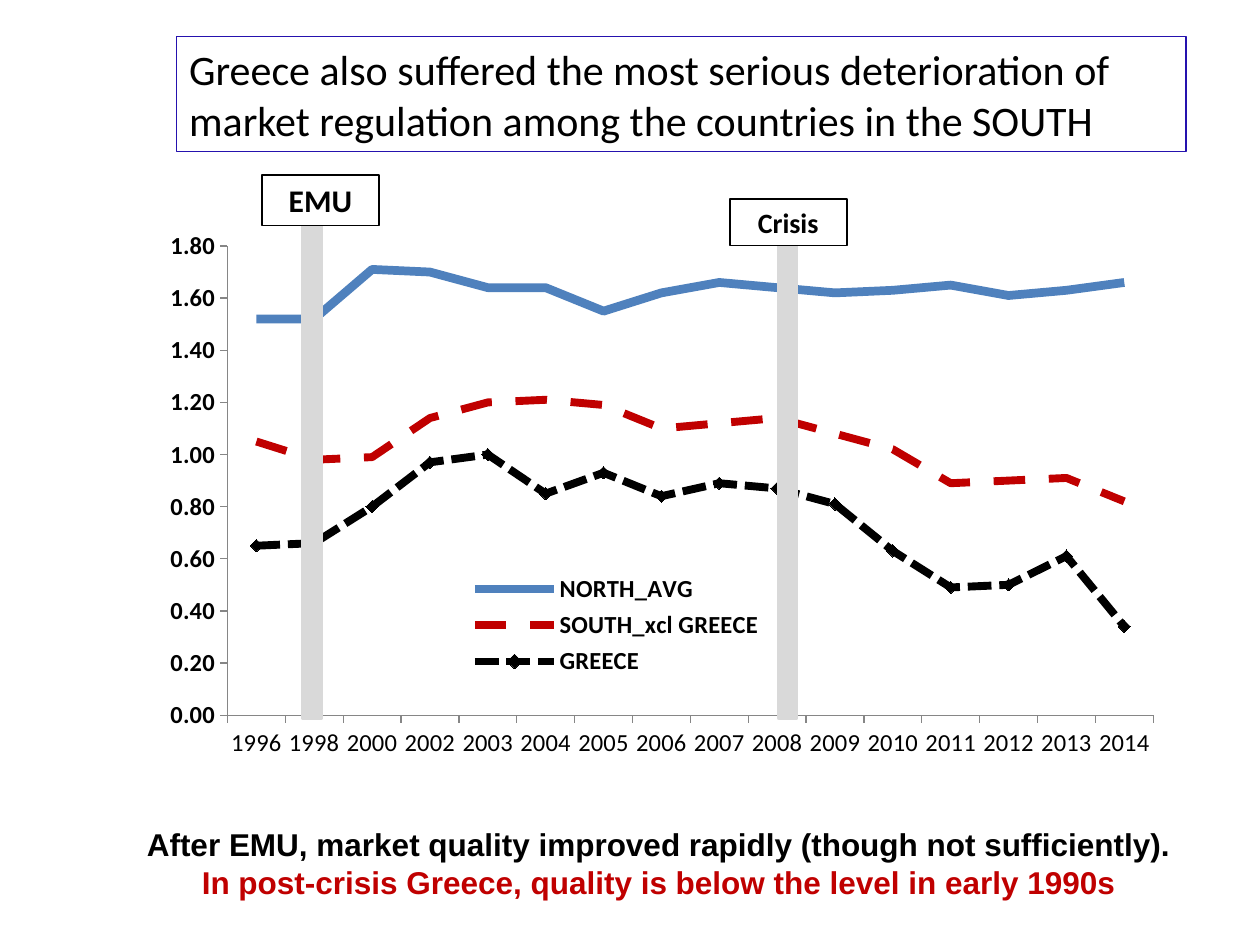
from lxml import etree
from pptx import Presentation
from pptx.chart.data import CategoryChartData
from pptx.dml.color import RGBColor
from pptx.enum.chart import XL_CHART_TYPE as ChartType, XL_LEGEND_POSITION as LegendPos
from pptx.enum.chart import XL_MARKER_STYLE as Marker, XL_TICK_MARK as Tick
from pptx.enum.dml import MSO_LINE_DASH_STYLE as Dash
from pptx.enum.shapes import MSO_SHAPE as Preset
from pptx.enum.text import MSO_ANCHOR as Anchor, MSO_AUTO_SIZE as AutoSize, PP_ALIGN as Align
from pptx.oxml import parse_xml
from pptx.oxml.ns import nsdecls, qn
from pptx.util import Cm, Pt

BLACK = RGBColor(0x00, 0x00, 0x00)
WHITE = RGBColor(0xFF, 0xFF, 0xFF)
RED = RGBColor(0xC0, 0x00, 0x00)
BLUE = RGBColor(0x4F, 0x81, 0xBD)
INDIGO = RGBColor(0x25, 0x12, 0xAE)
BAND_GREY = RGBColor(0xD9, 0xD9, 0xD9)
AXIS_GREY = RGBColor(0x86, 0x86, 0x86)


def style_font(font, size, color=BLACK, bold=False, name="Calibri"):
    values = {"name": name, "size": Pt(size), "bold": bold}
    for attribute, value in values.items():
        setattr(font, attribute, value)
    font.color.rgb = color


def set_layout(parent, before, x, y, w, h, inner=False):
    """Place a chart part by fractions of the chart area."""
    for old in parent.findall(qn("c:layout")):
        parent.remove(old)
    target = '<c:layoutTarget val="inner"/>' if inner else ""
    modes = '<c:xMode val="edge"/><c:yMode val="edge"/>'
    sizes = "".join(f'<c:{key} val="{value}"/>' for key, value in zip("xywh", (x, y, w, h)))
    layout = parse_xml(f'<c:layout {nsdecls("c")}><c:manualLayout>{target}{modes}{sizes}'
                       '</c:manualLayout></c:layout>')
    parent.find(qn(before)).addprevious(layout)


prs = Presentation()
prs.slide_width, prs.slide_height = Cm(25.4), Cm(19.05)
slide = prs.slides.add_slide(prs.slide_layouts[5])

# Title
title = slide.shapes.title
title_place = {"left": Cm(3.56), "top": Cm(0.74), "width": Cm(20.35), "height": Cm(2.31)}
for attribute, value in title_place.items():
    setattr(title, attribute, value)
title.line.color.rgb = INDIGO
title.line.width = Pt(0.75)
title.text_frame.text = ("Greece also suffered the most serious deterioration of "
                         "market regulation among the countries in the SOUTH")
title.text_frame.auto_size = AutoSize.NONE
title.text_frame.vertical_anchor = Anchor.MIDDLE
title.text_frame.paragraphs[0].alignment = Align.LEFT
style_font(title.text_frame.paragraphs[0].runs[0].font, 24)

# Market quality chart: name, colour, width, dash, values
regions = [
    ("NORTH_AVG", BLUE, 5, Dash.SOLID,
     [1.52, 1.52, 1.71, 1.7, 1.64, 1.64, 1.55, 1.62,
      1.66, 1.64, 1.62, 1.63, 1.65, 1.61, 1.63, 1.66]),
    ("SOUTH_xcl GREECE", RED, 4.5, Dash.DASH,
     [1.05, 0.98, 0.99, 1.14, 1.2, 1.21, 1.19, 1.1,
      1.12, 1.14, 1.08, 1.02, 0.89, 0.9, 0.91, 0.82]),
    ("GREECE", BLACK, 4.5, Dash.SQUARE_DOT,
     [0.65, 0.66, 0.8, 0.97, 1, 0.85, 0.93, 0.84,
      0.89, 0.87, 0.81, 0.63, 0.49, 0.5, 0.61, 0.34]),
]
quality = CategoryChartData(number_format="0.00")
quality.categories = ["1996", "1998", "2000"] + [str(year) for year in range(2002, 2015)]
for name, _, _, _, values in regions:
    quality.add_series(name, values)
chart = slide.shapes.add_chart(ChartType.LINE_MARKERS, Cm(3.1), Cm(4.52),
                               Cm(21.21), Cm(11), quality).chart
chart.has_title = False
style_font(chart.font, 10)
plot = chart.plots[0]
plot.vary_by_categories = False
for series, (name, color, width, dash, _) in zip(plot.series, regions):
    series.smooth = False
    series.format.line.color.rgb = color
    series.format.line.width = Pt(width)
    series.format.line.dash_style = dash
    series.marker.style = Marker.NONE
    if name == "GREECE":
        series.marker.style = Marker.DIAMOND
        series.marker.size = 7
        series.marker.format.fill.solid()
        series.marker.format.fill.fore_color.rgb = color
        series.marker.format.line.color.rgb = color

# Axes
for axis, bold in ((chart.category_axis, False), (chart.value_axis, True)):
    axis.has_major_gridlines = False
    axis.major_tick_mark = Tick.OUTSIDE
    axis.minor_tick_mark = Tick.NONE
    axis.format.line.color.rgb = AXIS_GREY
    style_font(axis.tick_labels.font, 14, bold=bold)
scale = {"minimum_scale": 0, "maximum_scale": 1.8, "major_unit": 0.2}
for attribute, value in scale.items():
    setattr(chart.value_axis, attribute, value)
chart.value_axis.tick_labels.number_format = "0.00"
chart.value_axis.tick_labels.number_format_is_linked = False

# Legend inside the plot
chart.has_legend = True
legend = chart.legend
legend.position = LegendPos.RIGHT
legend.include_in_layout = True
style_font(legend.font, 14, bold=True)
set_layout(legend._element, "c:overlay", 0.29, 0.63, 0.3, 0.21)
plot_area = chart._chartSpace.chart.plotArea
set_layout(plot_area, "c:lineChart", 0.07, 0.04, 0.88, 0.86, inner=True)

# Event bands with their labels: band left, width; label left, top, height; size
BAND_BOTTOM = 14.48
events = [
    ("Crisis", 15.7, 0.36, 14.71, 4.01, 0.94, 16),
    ("EMU", 6.1, 0.38, 5.28, 3.53, 1.02, 18),
]
for event, band_left, band_width, label_left, label_top, label_height, size in events:
    band_top = label_top + label_height
    band = slide.shapes.add_shape(Preset.RECTANGLE, Cm(band_left), Cm(band_top),
                                  Cm(band_width), Cm(BAND_BOTTOM - band_top))
    label = slide.shapes.add_shape(Preset.RECTANGLE, Cm(label_left), Cm(label_top),
                                   Cm(2.36), Cm(label_height))
    for box, fill, line, width in ((band, BAND_GREY, BAND_GREY, 2), (label, WHITE, BLACK, 1)):
        box.shadow.inherit = False
        box.fill.solid()
        box.fill.fore_color.rgb = fill
        box.line.color.rgb = line
        box.line.width = Pt(width)
    label.text_frame.text = event
    label.text_frame.vertical_anchor = Anchor.MIDDLE
    label.text_frame.paragraphs[0].alignment = Align.CENTER
    style_font(label.text_frame.paragraphs[0].runs[0].font, size, bold=True)

# Conclusion
conclusion = slide.shapes.add_textbox(Cm(2.69), Cm(16.51), Cm(21.18), Cm(1.8)).text_frame
conclusion.word_wrap = True
findings = [
    ("After EMU, market quality improved rapidly (though not sufficiently).", BLACK),
    ("In post-crisis Greece, quality is below the level in early 1990s", RED),
]
conclusion.text = "\n".join(text for text, _ in findings)
for paragraph, (_, color) in zip(conclusion.paragraphs, findings):
    paragraph.alignment = Align.CENTER
    style_font(paragraph.runs[0].font, 18, color, bold=True, name="Arial")

prs.save("out.pptx")
